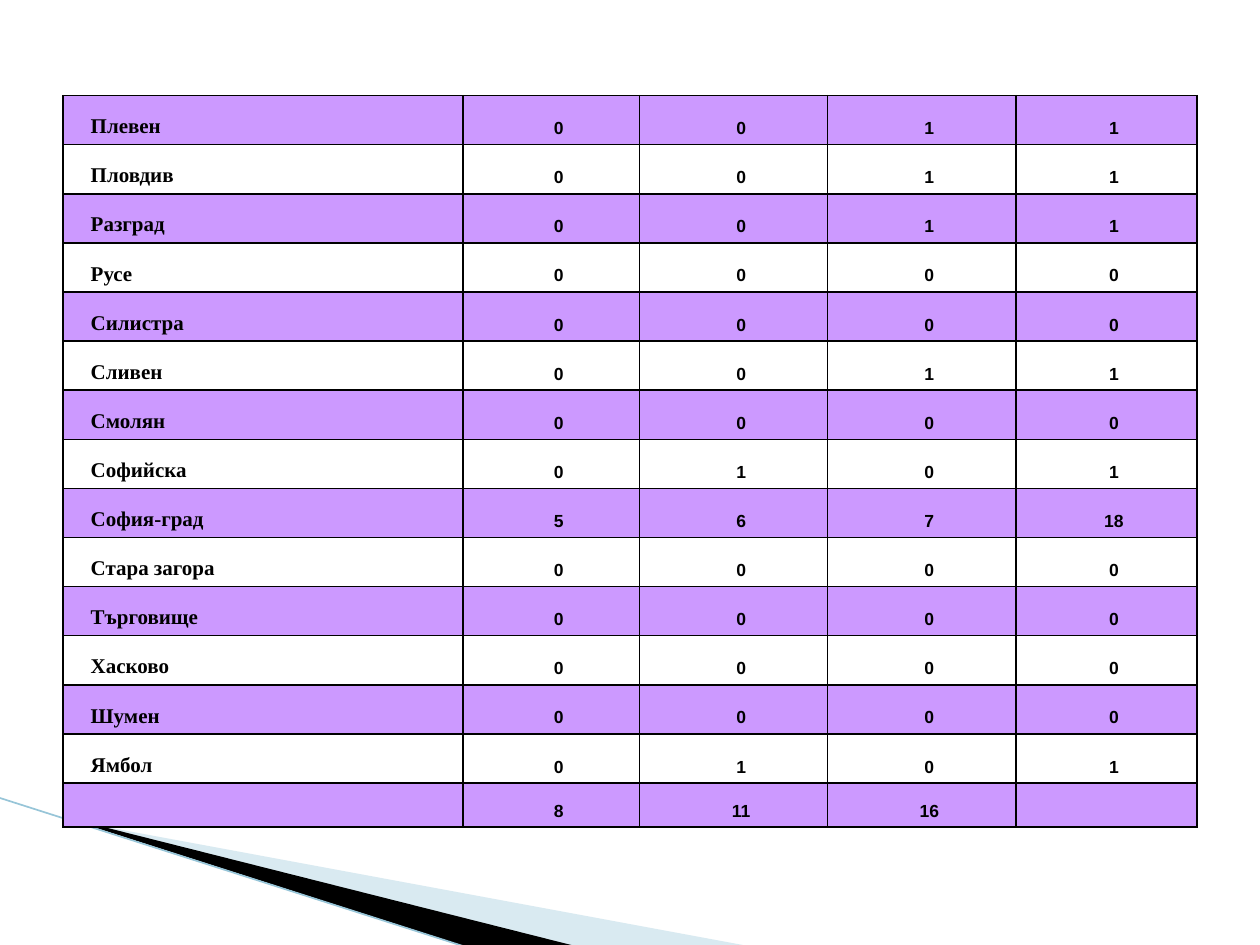
from lxml.etree import SubElement
from pptx import Presentation
from pptx.dml.color import RGBColor
from pptx.enum.shapes import MSO_CONNECTOR
from pptx.enum.text import MSO_ANCHOR, PP_ALIGN
from pptx.oxml.ns import qn
from pptx.util import Pt

COLORS = {"band": "CC99FF", "plain": "FFFFFF", "ink": "000000",
          "pale": "A0CBDC", "edge": "97C5D8"}
RGB = {name: RGBColor.from_string(value) for name, value in COLORS.items()}

prs = Presentation()
prs.slide_width, prs.slide_height = Pt(720), Pt(540)
s = prs.slides.add_slide(prs.slide_layouts[6])

# Corner wedges and the line along them
wedges = [
    ("pale", 40, [(39.6, 468.7), (428.4, 540.7), (328.3, 540.7), (39.6, 468)]),
    ("ink", 100, [(38.2, 467.3), (329, 540.7), (267.8, 541.4), (38.9, 468)]),
]
for color, opacity, points in wedges:
    start, *rest = [(Pt(x), Pt(y)) for x, y in points]
    builder = s.shapes.build_freeform(*start, scale=1.0)
    builder.add_line_segments(rest, close=True)
    sp = builder.convert_to_shape()
    sp.shadow.inherit = False
    sp.line.fill.background()
    sp.fill.solid()
    sp.fill.fore_color.rgb = RGB[color]
    if opacity < 100:
        clr = sp.fill._xPr.find(qn("a:solidFill"))[0]
        SubElement(clr, qn("a:alpha"), val=str(opacity * 1000))

edge = s.shapes.add_connector(MSO_CONNECTOR.STRAIGHT,
                              Pt(-0.7), Pt(455.8), Pt(267.1), Pt(541.4))
edge.line.color.rgb = RGB["edge"]
edge.line.width = Pt(0.95)
SubElement(edge._element.spPr, qn("a:effectLst"))

# Table of regions
rows = [
    ("Плевен", 0, 0, 1, 1),
    ("Пловдив", 0, 0, 1, 1),
    ("Разград", 0, 0, 1, 1),
    ("Русе", 0, 0, 0, 0),
    ("Силистра", 0, 0, 0, 0),
    ("Сливен", 0, 0, 1, 1),
    ("Смолян", 0, 0, 0, 0),
    ("Софийска", 0, 1, 0, 1),
    ("София-град", 5, 6, 7, 18),
    ("Стара загора", 0, 0, 0, 0),
    ("Търговище", 0, 0, 0, 0),
    ("Хасково", 0, 0, 0, 0),
    ("Шумен", 0, 0, 0, 0),
    ("Ямбол", 0, 1, 0, 1),
    ("", 8, 11, 16, ""),
]
col_widths = [228.5, 101, 107.5, 107.5, 103.5]
row_heights = [28.08] * (len(rows) - 1) + [25.2]
name_font = {"name": "Times New Roman", "size": Pt(12), "bold": True}
count_font = {"name": "Arial", "size": Pt(10), "bold": True}

table = s.shapes.add_table(len(rows), len(col_widths), Pt(36), Pt(54.6),
                           Pt(sum(col_widths)), Pt(sum(row_heights))).table
table.first_row = table.horz_banding = False
for column, width in zip(table.columns, col_widths):
    column.width = Pt(width)

for i, values in enumerate(rows):
    table.rows[i].height = Pt(row_heights[i])
    for j, value in enumerate(values):
        cell = table.cell(i, j)
        cell.vertical_anchor = MSO_ANCHOR.BOTTOM
        tc_pr = cell._tc.get_or_add_tcPr()
        for side in ("lnL", "lnR", "lnT", "lnB"):
            ln = SubElement(tc_pr, qn(f"a:{side}"), w=str(Pt(1)))
            fill = SubElement(ln, qn("a:solidFill"))
            SubElement(fill, qn("a:srgbClr"), val=COLORS["ink"])
        cell.fill.solid()
        cell.fill.fore_color.rgb = RGB["plain" if i % 2 else "band"]

        p = cell.text_frame.paragraphs[0]
        if value == "":
            # keeps the empty cell from stretching its row
            SubElement(p._p, qn("a:endParaRPr"), sz="1000")
            continue
        p.alignment = PP_ALIGN.CENTER if j else PP_ALIGN.LEFT
        p_pr = p._p.get_or_add_pPr()
        p_pr.set("marL", str(Pt(28.8)))
        p_pr.set("indent", str(Pt(-20.16)))
        r = p.add_run()
        r.text = str(value)
        for key, setting in (count_font if j else name_font).items():
            setattr(r.font, key, setting)
        r.font.color.rgb = RGB["ink"]

prs.save("out.pptx")
